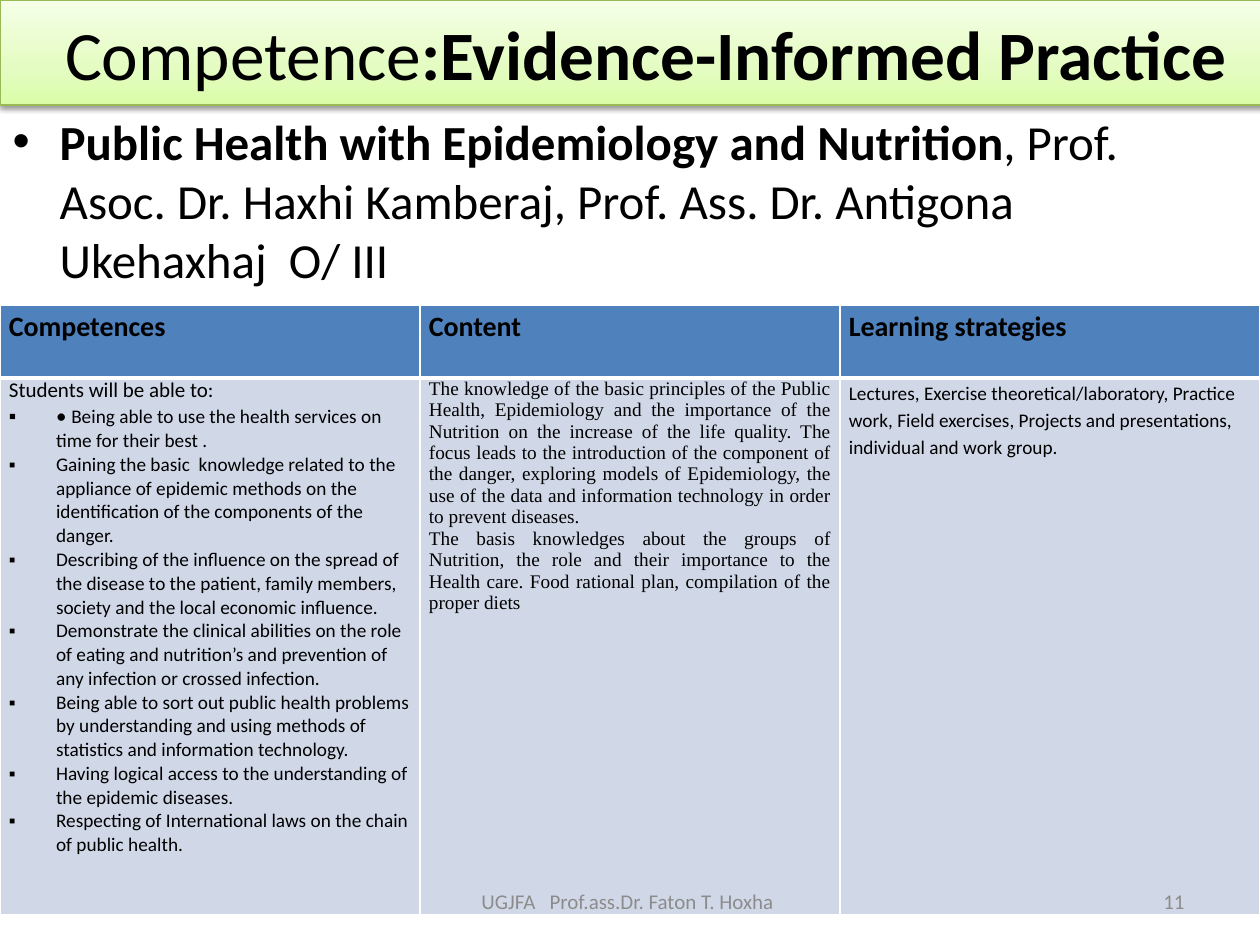
from pptx import Presentation
from pptx.dml.color import RGBColor
from pptx.enum.text import MSO_ANCHOR, MSO_AUTO_SIZE, PP_ALIGN
from pptx.oxml import parse_xml
from pptx.oxml.ns import nsdecls
from pptx.util import Cm, Pt

# Content: each paragraph is a list of (text, size name, bold)
TITLE = [("Competence", "title", False),
         (":Evidence-Informed Practice", "title", True)]
COURSE = [("Public Health with Epidemiology and Nutrition", "body", True),
          (", Prof. Asoc. Dr. Haxhi Kamberaj, Prof. Ass. Dr. Antigona "
           "Ukehaxhaj  O/ III", "body", False)]
HEADS = ["Competences", "Content", "Learning strategies"]
INTRO = "Students will be able to:"
SKILLS = [
    "Being able to use the health services on time for their best .",
    "Gaining the basic  knowledge related to the appliance of epidemic methods "
    "on the identification of the components of the danger.",
    "Describing of the influence on the spread of the disease to the patient, "
    "family members, society and the local economic influence.",
    "Demonstrate the clinical abilities on the role of eating and nutrition’s "
    "and prevention of any infection or crossed infection.",
    "Being able to sort out public health problems by understanding and using "
    "methods of statistics and information technology.",
    "Having logical access to the understanding of the epidemic diseases.",
    "Respecting of International laws on the chain of public health.",
]
TOPICS = [
    "The knowledge of the basic principles of the Public Health, Epidemiology "
    "and the importance of the Nutrition on the increase of the life quality. "
    "The focus leads to the introduction of the component of the danger, "
    "exploring models of Epidemiology, the use of the data and information "
    "technology in order to prevent diseases.",
    "The basis knowledges about the groups of Nutrition, the role and their "
    "importance to the Health care. Food rational plan, compilation of the "
    "proper diets",
]
METHODS = ("Lectures, Exercise theoretical/laboratory, Practice work, Field "
           "exercises, Projects and presentations, individual and work group.")
# Text, alignment, left, width
FOOTS = [("11", PP_ALIGN.RIGHT, 18.2, 5.93),
         ("UGJFA   Prof.ass.Dr. Faton T. Hoxha ", PP_ALIGN.CENTER, 8.68, 8.04)]

THEME = {
    "font": "Calibri", "serif": "Times New Roman",
    "ink": "000000", "mute": "8C8C8C", "edge": "98B955",
    "head": "4F81BD", "cell": "D0D8E8", "rule": "FFFFFF",
    "fade": [(0, "DAFDA7"), (35, "E4FCC2"), (100, "F5FFE7")],
    "size": {"title": 39.6, "body": 28, "head": 16, "intro": 12,
             "text": 11, "foot": 12},
}
INDENT = Cm(0.95)


def color(name):
    return RGBColor.from_string(THEME[name])


def write(para, runs, font="font", ink="ink", align=None, space=None):
    for text, size, bold in runs:
        run = para.add_run()
        run.text = text
        run.font.name = THEME[font]
        run.font.size = Pt(THEME["size"][size])
        run.font.bold = bold
        run.font.color.rgb = color(ink)
    para.alignment = align
    para.line_spacing = space


def bullet(para, mark):
    props = para._p.get_or_add_pPr()
    props.set("marL", str(INDENT))
    props.set("indent", str(-INDENT))
    props.append(parse_xml(f'<a:buFont {nsdecls("a")} typeface="Arial"/>'))
    props.append(parse_xml(f'<a:buChar {nsdecls("a")} char="{mark}"/>'))


def place(shape, left, top, width, height):
    shape.left, shape.top = Cm(left), Cm(top)
    shape.width, shape.height = Cm(width), Cm(height)


def border(cell, sides):
    props = cell._tc.get_or_add_tcPr()
    for i, (side, width) in enumerate(sides.items()):
        props.insert(i, parse_xml(
            f'<a:ln{side} {nsdecls("a")} w="{Pt(width)}"><a:solidFill>'
            f'<a:srgbClr val="{THEME["rule"]}"/></a:solidFill></a:ln{side}>'))


def banner(shape):
    shape.line.color.rgb = color("edge")
    shape.line.width = Pt(0.75)
    stops = "".join(f'<a:gs pos="{pos * 1000}"><a:srgbClr val="{tone}"/></a:gs>'
                    for pos, tone in THEME["fade"])
    line = shape.line._get_or_add_ln()
    line.addprevious(parse_xml(
        f'<a:gradFill {nsdecls("a")} rotWithShape="1"><a:gsLst>{stops}</a:gsLst>'
        '<a:lin ang="16200000" scaled="0"/></a:gradFill>'))
    line.addnext(parse_xml(
        f'<a:effectLst {nsdecls("a")}><a:outerShdw blurRad="{Pt(3.1)}" '
        f'dist="{Pt(1.6)}" dir="5400000" rotWithShape="0"><a:srgbClr val="000000">'
        '<a:alpha val="38000"/></a:srgbClr></a:outerShdw></a:effectLst>'))


def main():
    deck = Presentation()
    deck.slide_width, deck.slide_height = Cm(25.4), Cm(19.05)
    slide = deck.slides.add_slide(deck.slide_layouts[1])

    # Title banner
    title = slide.shapes.title
    place(title, 0, 0, 26.04, 2.12)
    banner(title)
    title.text_frame.auto_size = MSO_AUTO_SIZE.NONE
    title.text_frame.vertical_anchor = MSO_ANCHOR.MIDDLE
    write(title.text_frame.paragraphs[0], TITLE, align=PP_ALIGN.CENTER)

    # Course line
    body = slide.placeholders[1]
    place(body, 0, 2.12, 24.77, 14.9)
    body.text_frame.auto_size = MSO_AUTO_SIZE.NONE
    para = body.text_frame.paragraphs[0]
    write(para, COURSE)
    bullet(para, "•")

    # Table grid
    table = slide.shapes.add_table(2, len(HEADS), 0, Cm(6.15),
                                   Cm(25.4), Cm(12.29)).table
    table.rows[0].height, table.rows[1].height = Cm(1.47), Cm(10.82)
    for r, row in enumerate(table.rows):
        sides = {"L": 1, "R": 1, "T": 3 if r else 1, "B": 1 if r else 3}
        for cell in row.cells:
            cell.margin_left = cell.margin_right = Cm(0.18)
            cell.margin_top = cell.margin_bottom = 0
            cell.fill.solid()
            cell.fill.fore_color.rgb = color("cell" if r else "head")
            border(cell, sides)

    # Table text
    for col, head in enumerate(HEADS):
        write(table.cell(0, col).text_frame.paragraphs[0],
              [(head, "head", True)], space=1.15)
    skills, topics, methods = (table.cell(1, col).text_frame for col in range(3))
    write(skills.paragraphs[0], [(INTRO, "intro", False)])
    for i, skill in enumerate(SKILLS):
        lead = [] if i else [("• ", "intro", False)]
        para = skills.add_paragraph()
        write(para, lead + [(skill, "text", False)])
        bullet(para, "▪")
    for i, topic in enumerate(TOPICS):
        para = topics.add_paragraph() if i else topics.paragraphs[0]
        write(para, [(topic, "text", False)], font="serif",
              align=PP_ALIGN.JUSTIFY)
    write(methods.paragraphs[0], [(METHODS, "text", False)], space=1.15)

    # Footer and page number
    for text, align, left, width in FOOTS:
        frame = slide.shapes.add_textbox(Cm(left), Cm(17.66), Cm(width),
                                         Cm(1.01)).text_frame
        frame.word_wrap = True
        frame.vertical_anchor = MSO_ANCHOR.MIDDLE
        write(frame.paragraphs[0], [(text, "foot", False)], ink="mute",
              align=align)

    deck.save("out.pptx")


if __name__ == "__main__":
    main()
